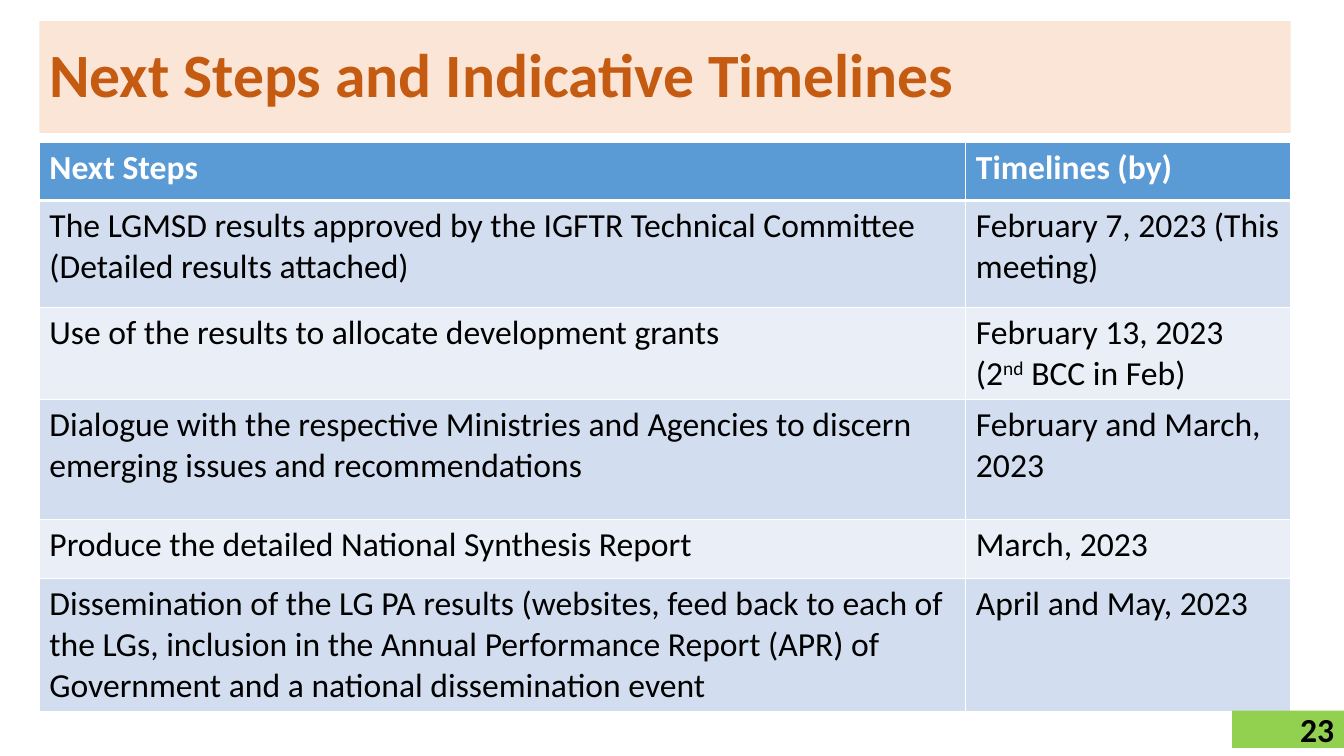
"""Builds the slide of next steps and their timelines."""
from dataclasses import dataclass

from lxml.etree import SubElement
from pptx import Presentation
from pptx.dml.color import RGBColor
from pptx.enum.shapes import MSO_SHAPE
from pptx.enum.text import MSO_ANCHOR, PP_ALIGN
from pptx.oxml.ns import qn
from pptx.util import Inches, Pt

CELL = 0.1
LEFT, WIDTH = 3.9, 124.1


@dataclass(frozen=True)
class Box:
    col: float
    row: float
    wide: float
    high: float
    fill: str


@dataclass(frozen=True)
class Step:
    task: str
    due: str
    high: float


TITLE = Box(LEFT, 2.1, WIDTH, 11.1, "FBE5D6")
PAGE = Box(122.2, 70.5, 11.1, 3.7, "92D050")
COLS = (91.9, 32.2)
STEPS = [
    Step("Next Steps", "Timelines (by)", 5.8),
    Step("The LGMSD results approved by the IGFTR Technical Committee (Detailed results attached)",
         "February 7, 2023 (This meeting)", 10.6),
    Step("Use of the results to allocate development grants",
         "February 13, 2023\n(2^nd^ BCC in Feb)", 9.1),
    Step("Dialogue with the respective Ministries and Agencies to discern emerging issues"
         " and recommendations", "February and March, 2023", 11.9),
    Step("Produce the detailed National Synthesis Report", "March, 2023", 5.9),
    Step("Dissemination of the LG PA results (websites, feed back to each of the LGs, inclusion"
         " in the Annual Performance Report (APR) of Government and a national dissemination event",
         "April and May, 2023", 13.2),
]


def grid(count: float) -> int:
    return Inches(count * CELL)


def tint(code: str) -> RGBColor:
    return RGBColor.from_string(code)


def write(frame, text: str, *, size: float = 24, color: str = "000000", bold: bool = False,
          align=PP_ALIGN.LEFT, space: float = 1) -> None:
    frame.word_wrap = True
    for line, words in enumerate(text.split("\n")):
        para = frame.add_paragraph() if line else frame.paragraphs[0]
        para.alignment, para.line_spacing = align, space
        for part, piece in enumerate(words.split("^")):
            run = para.add_run()
            run.text = piece
            font = run.font
            font.name, font.size, font.bold = "Calibri", Pt(size), bold
            font.color.rgb = tint(color)
            if part % 2:
                run._r.get_or_add_rPr().set("baseline", "30000")


def draw(slide, box: Box, text: str, **style) -> None:
    shape = slide.shapes.add_shape(MSO_SHAPE.RECTANGLE, grid(box.col), grid(box.row),
                                   grid(box.wide), grid(box.high))
    shape.shadow.inherit = False
    shape.fill.solid()
    shape.fill.fore_color.rgb = tint(box.fill)
    shape.line.fill.background()
    shape.text_frame.vertical_anchor = MSO_ANCHOR.MIDDLE
    write(shape.text_frame, text, **style)


def edge(cell, row: int) -> None:
    props = cell._tc.get_or_add_tcPr()
    thick = {"T": row == 1, "B": row == 0}
    for place, side in enumerate("LRTB"):
        line = SubElement(props, qn(f"a:ln{side}"), w=str(Pt(3 if thick.get(side) else 1)))
        fill = SubElement(line, qn("a:solidFill"))
        SubElement(fill, qn("a:srgbClr"), val="FFFFFF")
        props.insert(place, line)


def plan(slide, steps: list[Step]) -> None:
    high = sum(step.high for step in steps)
    table = slide.shapes.add_table(len(steps), len(COLS), grid(LEFT), grid(14.1),
                                   grid(WIDTH), grid(high)).table
    for col, wide in zip(table.columns, COLS):
        col.width = grid(wide)
    for row, step in enumerate(steps):
        table.rows[row].height = grid(step.high)
        head = row == 0
        fill = "5B9BD5" if head else ("EAEFF7", "D2DEEF")[row % 2]
        for cell, text in zip(table.rows[row].cells, (step.task, step.due)):
            cell.fill.solid()
            cell.fill.fore_color.rgb = tint(fill)
            edge(cell, row)
            write(cell.text_frame, text, bold=head, color="FFFFFF" if head else "000000")


def main() -> None:
    deck = Presentation()
    deck.slide_width, deck.slide_height = Inches(13.33), Inches(7.5)
    slide = deck.slides.add_slide(deck.slide_layouts[6])
    draw(slide, TITLE, "Next Steps and Indicative Timelines",
         size=44, color="C55A11", bold=True, space=0.9)
    plan(slide, STEPS)
    draw(slide, PAGE, "23", bold=True, align=PP_ALIGN.RIGHT)
    deck.save("out.pptx")


if __name__ == "__main__":
    main()
